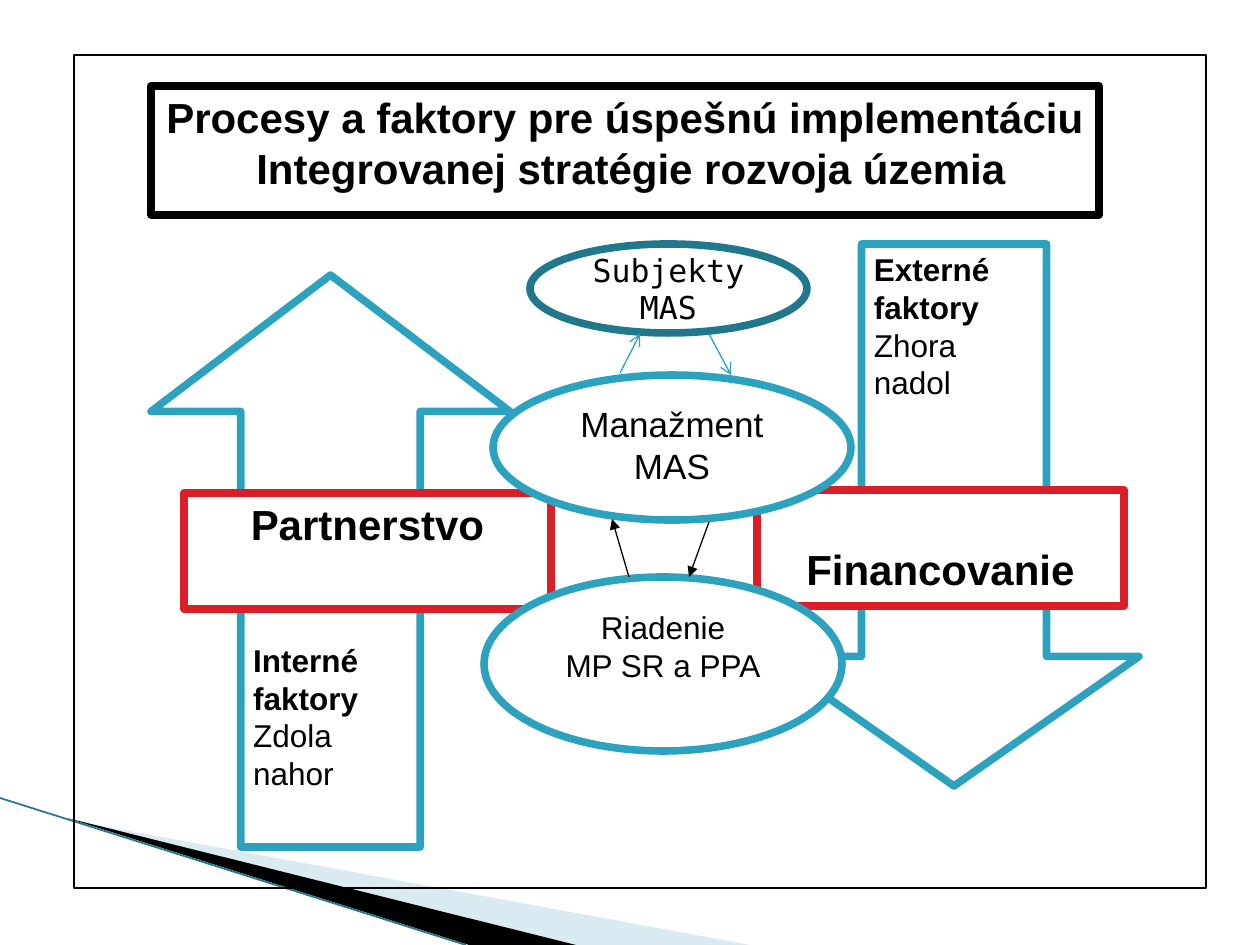
import lxml.etree
import pptx
import pptx.dml.color
import pptx.enum.shapes
import pptx.enum.text
import pptx.oxml.ns
import pptx.util

PX = 914400 / 126
KIND = pptx.enum.shapes.MSO_SHAPE
ALIGN = pptx.enum.text.PP_ALIGN
ANCHOR = pptx.enum.text.MSO_ANCHOR


class Theme:
    """Hold the colours, fonts and sizes of the slide."""
    black, white = "000000", "FFFFFF"
    teal, deep, red, pale = "2DA2BF", "21788D", "DA1F28", "A0CBDC"
    sans, mono = "Arial", "DejaVu Sans Mono"
    big, mid, small = 24, 20, 18
    thick, thin = 4.33, 0.75


def emu(px):
    """Turn px into EMU."""
    return pptx.util.Emu(round(px * PX))


def rgb(code):
    """Make a colour from its hex code."""
    return pptx.dml.color.RGBColor.from_string(code)


def child(node, tag, **attrs):
    """Add a drawing element to a node."""
    return lxml.etree.SubElement(node, pptx.oxml.ns.qn(tag), **attrs)


def inside(box, x, y, w, h):
    """Place a part relative to a box."""
    return box[0] + x, box[1] + y, w, h


def shape(slide, kind, box, line, width=Theme.thick, fill=Theme.white):
    """Add an outlined preset shape."""
    item = slide.shapes.add_shape(kind, *map(emu, box))
    item.shadow.inherit = False
    if fill:
        item.fill.solid()
        item.fill.fore_color.rgb = rgb(fill)
    else:
        item.fill.background()
    item.line.color.rgb = rgb(line)
    item.line.width = pptx.util.Pt(width)
    child(item.line._get_or_add_ln(), "a:round")
    return item


def write(item, lines, size, bold=(), align=ALIGN.CENTER, font=Theme.sans,
          anchor=ANCHOR.TOP, top=6, low=6):
    """Fill a shape with text and format its runs."""
    frame = item.text_frame
    frame.word_wrap = True
    frame.vertical_anchor = anchor
    frame.margin_top, frame.margin_bottom = emu(top), emu(low)
    frame.text = "\n".join(lines)
    for rank, para in enumerate(frame.paragraphs):
        para.alignment = align
        for run in para.runs:
            run.font.name = font
            run.font.size = pptx.util.Pt(size)
            run.font.bold = rank in bold
            run.font.color.rgb = rgb(Theme.black)


def link(slide, box, ends, color, head=None, width=Theme.thin):
    """Draw a straight line, with an arrowhead if named."""
    points = [emu(box[i % 2] + end) for i, end in enumerate(ends)]
    item = slide.shapes.add_connector(
        pptx.enum.shapes.MSO_CONNECTOR.STRAIGHT, *points)
    item.line.color.rgb = rgb(color)
    item.line.width = pptx.util.Pt(width)
    if head:
        child(item.line._get_or_add_ln(), "a:tailEnd", type=head)
    child(item._element.spPr, "a:effectLst")


def wedge(slide, box, points, color, alpha=None):
    """Draw a filled wedge."""
    spots = [(box[0] + x, box[1] + y) for x, y in points]
    pen = slide.shapes.build_freeform(*spots[0], scale=PX)
    pen.add_line_segments(spots[1:], close=True)
    item = pen.convert_to_shape()
    item.shadow.inherit = False
    item.fill.solid()
    item.fill.fore_color.rgb = rgb(color)
    item.line.fill.background()
    if alpha:
        tint = item._element.spPr.find(".//" + pptx.oxml.ns.qn("a:srgbClr"))
        child(tint, "a:alpha", val=str(alpha * 1000))


def swoosh(slide, box):
    """Draw the corner decoration."""
    wedge(slide, box, [(69, 22), (750, 147), (575, 147)], Theme.pale, 40)
    wedge(slide, box, [(67, 20), (576, 147), (469, 147)], Theme.black)
    link(slide, box, (0, 0, 466, 147), Theme.deep, width=1)


def title(slide, box):
    """Draw the heading."""
    item = shape(slide, KIND.RECTANGLE, box, Theme.black)
    write(item, ["Procesy a faktory pre úspešnú implementáciu",
                 "Integrovanej stratégie rozvoja územia"],
          Theme.big, bold=(0, 1))
    last = item.text_frame.paragraphs[1]
    last._p.get_or_add_pPr().set("marL", str(emu(12)))


def inner(slide, box):
    """Draw the rising arrow and the partnership box."""
    arrow = shape(slide, KIND.UP_ARROW, inside(box, 0, 0, 359, 572),
                  Theme.teal)
    arrow.adjustments[1] = 0.38
    write(arrow, ["Interné faktory", "Zdola nahor"], Theme.small, (0,),
          ALIGN.LEFT, anchor=ANCHOR.BOTTOM, low=55)
    label = shape(slide, KIND.RECTANGLE, inside(box, 33, 218, 367, 116),
                  Theme.red)
    write(label, ["Partnerstvo"], Theme.big, (0,))


def outer(slide, box):
    """Draw the falling arrow and the funding box."""
    arrow = shape(slide, KIND.DOWN_ARROW, inside(box, 12, 0, 370, 542),
                  Theme.teal)
    arrow.adjustments[1] = 0.35
    write(arrow, ["Externé faktory", "Zhora nadol"], Theme.small, (0,),
          ALIGN.LEFT)
    label = shape(slide, KIND.RECTANGLE, inside(box, 0, 246, 367, 116),
                  Theme.red)
    write(label, ["Financovanie"], Theme.big, (0,), top=54)


def core(slide, box):
    """Draw the three bodies and the arrows between them."""
    lead = shape(slide, KIND.OVAL, inside(box, 9, 131, 358, 145), Theme.teal)
    write(lead, ["Manažment MAS"], Theme.mid)
    rule = shape(slide, KIND.OVAL, inside(box, 0, 333, 358, 174), Theme.teal)
    write(rule, ["Riadenie", "MP SR a PPA"], Theme.small)
    group = shape(slide, KIND.OVAL, inside(box, 46, 0, 277, 89), Theme.deep)
    write(group, ["Subjekty MAS"], Theme.small, font=Theme.mono,
          anchor=ANCHOR.MIDDLE)
    for ends in [(225, 278, 205, 333), (145, 333, 128, 275)]:
        link(slide, box, ends, Theme.black, "triangle")
    for ends in [(225, 90, 247, 131), (136, 129, 156, 90)]:
        link(slide, box, ends, Theme.teal, "arrow")


def main():
    """Build and save the slide."""
    deck = pptx.Presentation()
    deck.slide_width, deck.slide_height = emu(1260), emu(945)
    slide = deck.slides.add_slide(deck.slide_layouts[6])
    swoosh(slide, (0, 798, 750, 147))
    shape(slide, KIND.RECTANGLE, (74, 55, 1132, 833), Theme.black,
          Theme.thin, None)
    inner(slide, (151, 275, 400, 572))
    outer(slide, (757, 244, 382, 542))
    title(slide, (151, 86, 948, 129))
    core(slide, (484, 244, 367, 507))
    deck.save("out.pptx")


if __name__ == "__main__":
    main()
